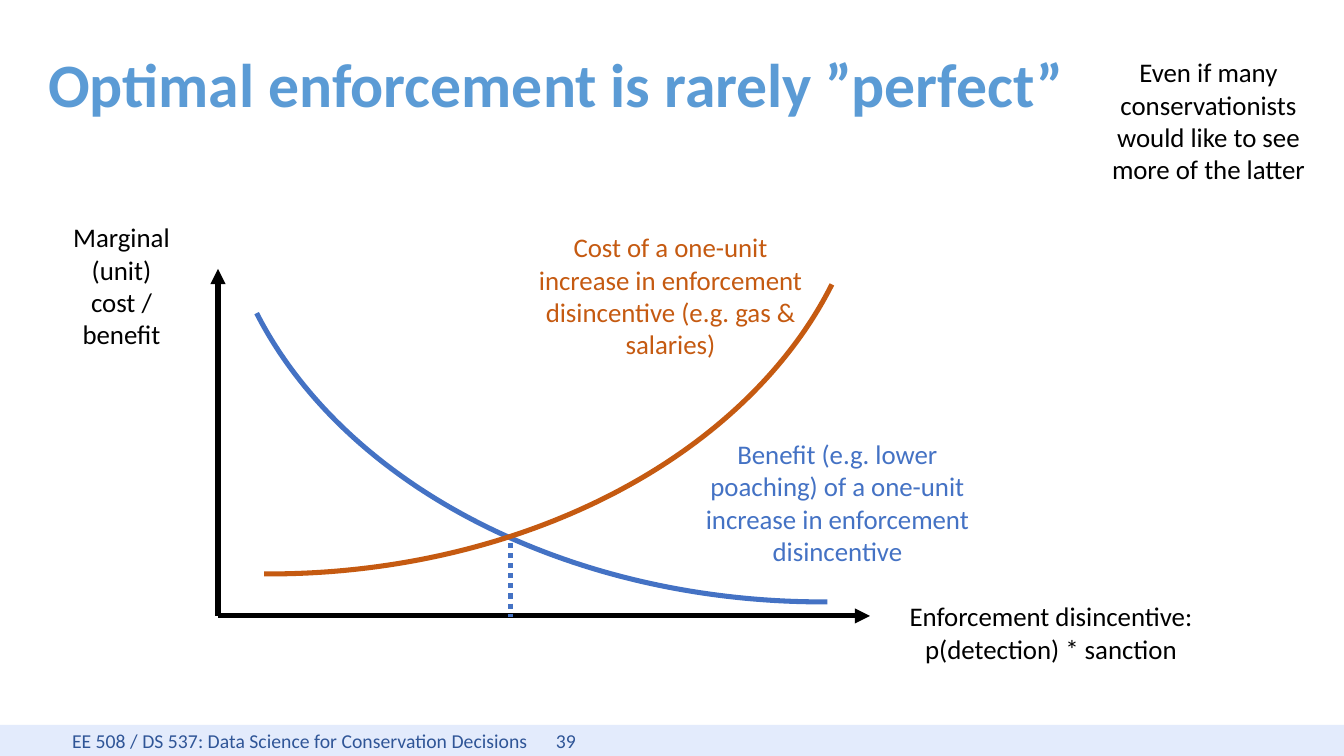
from typing import NamedTuple

from lxml.etree import SubElement
from pptx import Presentation
from pptx.dml.color import RGBColor
from pptx.enum.dml import MSO_LINE
from pptx.enum.shapes import MSO_CONNECTOR, MSO_SHAPE
from pptx.enum.text import MSO_ANCHOR, MSO_AUTO_SIZE, PP_ALIGN
from pptx.oxml.ns import qn
from pptx.util import Pt

SCALE = 7557  # EMU per px, 121 px to the inch
FONT = "Calibri"
COLORS = {
    "ink": "000000",
    "title": "5B9BD5",
    "benefit": "4472C4",
    "cost": "C55A11",
    "band": "E3EBFC",
    "footer": "2F5597",
}


class Label(NamedTuple):
    text: str
    box: tuple[int, int, int, int]
    color: str = "ink"


class Rule(NamedTuple):
    start: tuple[int, int]
    end: tuple[int, int]
    color: str = "ink"
    arrow: bool = True


class Curve(NamedTuple):
    box: tuple[int, int, int, int]
    color: str
    flips: tuple[str, ...]


ORIGIN = (218, 616)
RULES = [
    Rule(ORIGIN, (870, 616)),
    Rule(ORIGIN, (218, 269)),
    Rule((511, 543), (511, 617), "benefit", arrow=False),
]
CURVES = [
    Curve((218, -289, 1209, 891), "benefit", ("flipH", "flipV")),
    Curve((-332, -317, 1202, 891), "cost", ("flipV",)),
]
LABELS = [
    Label("Enforcement disincentive: p(detection) * sanction", (862, 594, 378, 78)),
    Label("Marginal (unit) cost / benefit", (51, 215, 141, 143)),
    Label("Cost of a one-unit increase in enforcement disincentive "
          "(e.g. gas & salaries)", (521, 225, 299, 143), "cost"),
    Label("Benefit (e.g. lower poaching) of a one-unit increase in "
          "enforcement disincentive", (673, 432, 329, 143), "benefit"),
    Label("Even if many conservationists would like to see more of the latter",
          (1094, 50, 229, 143)),
]


def px(*vals: int) -> list[int]:
    """Turn px into EMU."""
    return [val * SCALE for val in vals]


def rgb(name: str) -> RGBColor:
    return RGBColor.from_string(COLORS[name])


def style(para, size: float, color: str, align, bold: bool = False) -> None:
    para.alignment = align
    font = para.font
    font.name, font.size, font.bold = FONT, Pt(size), bold
    font.color.rgb = rgb(color)


def stroke(line, color: str) -> None:
    line.color.rgb = rgb(color)
    line.width = Pt(3)


def add_footer(slide) -> None:
    band = slide.shapes.add_shape(MSO_SHAPE.RECTANGLE, *px(0, 725, 1344, 31))
    band.shadow.inherit = False
    band.fill.solid()
    band.fill.fore_color.rgb = rgb("band")
    band.line.fill.background()
    frame = band.text_frame
    frame.vertical_anchor = MSO_ANCHOR.MIDDLE
    frame.margin_left, frame.margin_top, frame.margin_bottom = px(12, 0, 0)
    para = frame.paragraphs[0]
    para.text = "\tEE 508 / DS 537: Data Science for Conservation Decisions\t39"
    tabs = SubElement(para._p.get_or_add_pPr(), qn("a:tabLst"))
    for stop in px(60, 544):
        SubElement(tabs, qn("a:tab"), pos=str(stop), algn="l")
    style(para, 11.7, "footer", PP_ALIGN.LEFT)


def add_title(slide) -> None:
    title = slide.shapes.title
    title.left, title.top, title.width, title.height = px(36, 35, 1281, 105)
    frame = title.text_frame
    frame.text = "Optimal enforcement is rarely ”perfect”"
    frame.auto_size = MSO_AUTO_SIZE.NONE
    frame.vertical_anchor = MSO_ANCHOR.MIDDLE
    para = frame.paragraphs[0]
    para.line_spacing = 0.9
    style(para, 36.7, "title", PP_ALIGN.LEFT, bold=True)


def add_rule(slide, rule: Rule) -> None:
    """Draw an axis arrow or a dotted drop line."""
    link = slide.shapes.add_connector(
        MSO_CONNECTOR.STRAIGHT, *px(*rule.start, *rule.end))
    stroke(link.line, rule.color)
    if rule.arrow:
        SubElement(link.line._get_or_add_ln(), qn("a:tailEnd"), type="triangle")
    else:
        link.line.dash_style = MSO_LINE.ROUND_DOT
    SubElement(link._element.spPr, qn("a:effectLst"))


def add_curve(slide, curve: Curve) -> None:
    arc = slide.shapes.add_shape(MSO_SHAPE.ARC, *px(*curve.box))
    arc.shadow.inherit = False
    arc.fill.background()
    stroke(arc.line, curve.color)
    arc.adjustments[0], arc.adjustments[1] = 161.63, 206.71
    for flip in curve.flips:
        arc._element.spPr.xfrm.set(flip, "1")


def add_label(slide, label: Label) -> None:
    frame = slide.shapes.add_textbox(*px(*label.box)).text_frame
    frame.word_wrap = True
    frame.auto_size = MSO_AUTO_SIZE.SHAPE_TO_FIT_TEXT
    frame.text = label.text
    style(frame.paragraphs[0], 16, label.color, PP_ALIGN.CENTER)


def main() -> None:
    deck = Presentation()
    deck.slide_width, deck.slide_height = px(1344, 756)
    slide = deck.slides.add_slide(deck.slide_layouts.get_by_name("Title Only"))
    add_footer(slide)
    add_title(slide)
    for curve in CURVES:
        add_curve(slide, curve)
    for rule in RULES:
        add_rule(slide, rule)
    for label in LABELS:
        add_label(slide, label)
    deck.save("out.pptx")


if __name__ == "__main__":
    main()
